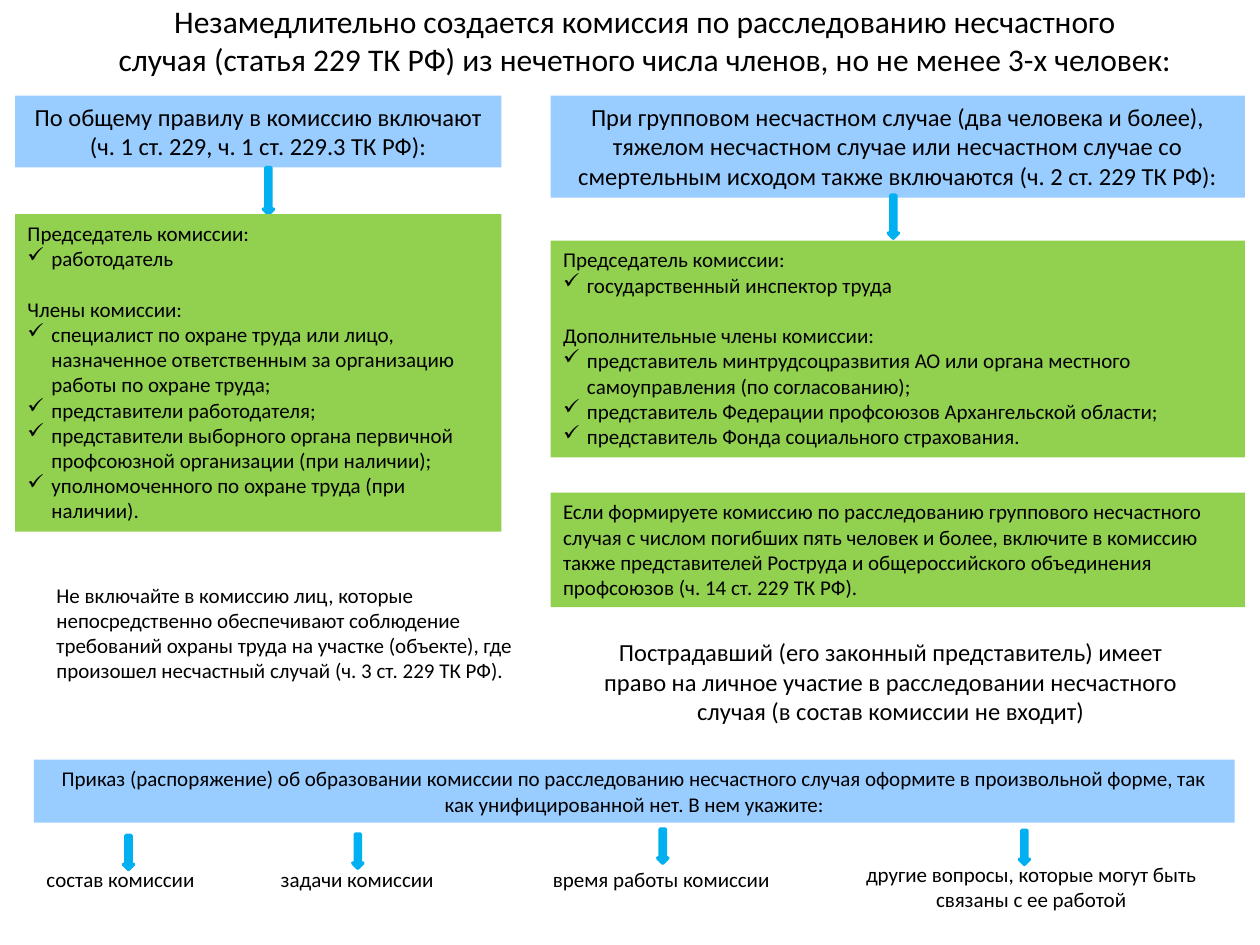
from pptx import Presentation
from pptx.dml.color import RGBColor
from pptx.enum.shapes import MSO_SHAPE
from pptx.enum.text import MSO_ANCHOR, PP_ALIGN
from pptx.oxml.ns import qn
from pptx.util import Inches, Pt
from lxml import etree

BLUE, GREEN, ARROW, BLACK = "99CCFF", "92D050", "00B0F0", "000000"


def color(text):
    return RGBColor.from_string(text)


def block(place, lines, size=12, fill=None, center=False, wrap=True):
    """Add a filled box, or a bare text box; "✓ " starts a bullet, "¶ " a spaced heading."""
    area = [Inches(n) for n in place]
    if fill:
        shape = slide.shapes.add_shape(MSO_SHAPE.RECTANGLE, *area)
        shape.shadow.inherit = False
        shape.fill.solid()
        shape.fill.fore_color.rgb = color(fill)
        shape.line.fill.background()
    else:
        shape = slide.shapes.add_textbox(*area)
    frame = shape.text_frame
    frame.word_wrap = wrap
    frame.vertical_anchor = MSO_ANCHOR.TOP
    for i, line in enumerate(lines):
        para = frame.add_paragraph() if i else frame.paragraphs[0]
        para.alignment = PP_ALIGN.CENTER if center else PP_ALIGN.LEFT
        if line.startswith("✓ "):
            props = para._p.get_or_add_pPr()
            props.set("marL", str(Inches(0.19)))
            props.set("indent", str(-Inches(0.19)))
            etree.SubElement(props, qn("a:buChar")).set("char", "✓")
        elif line.startswith("¶ "):
            para.space_before = Pt(14.6)
        for j, part in enumerate(line.removeprefix("✓ ").removeprefix("¶ ").split("\n")):
            if j:
                para.add_line_break()
            run = para.add_run()
            run.text = part
            run.font.name = "Calibri"
            run.font.size = Pt(size)
            run.font.color.rgb = color(BLACK)


deck = Presentation()
deck.slide_width, deck.slide_height = Inches(10), Inches(7.5)
slide = deck.slides.add_slide(deck.slide_layouts[6])

# Title and blue headings
block((0.59, -0.03, 9.06, 0.71), [
    "Незамедлительно создается комиссия по расследованию несчастного\n"
    "случая (статья 229 ТК РФ) из нечетного числа членов, но не менее 3-х человек:",
], 18, center=True)
left, right = (0.12, 3.86), (4.37, 5.51)
heads = [
    (left, 0.57, "По общему правилу в комиссию включают (ч. 1 ст. 229, ч. 1 ст. 229.3 ТК РФ):"),
    (right, 0.81, "При групповом несчастном случае (два человека и более), тяжелом "
                  "несчастном случае или несчастном случае со смертельным исходом "
                  "также включаются (ч. 2 ст. 229 ТК РФ):"),
]
for (x, width), height, text in heads:
    block((x, 0.76, width, height), [text], 14, BLUE, center=True)
block((0.27, 6.03, 9.53, 0.5), [
    "Приказ (распоряжение) об образовании комиссии по расследованию несчастного "
    "случая оформите в произвольной форме, так как унифицированной нет. В нем укажите:",
], fill=BLUE, center=True)

# Arrows
arrows = [(2.09, 1.33, 0.37), (7.05, 1.55, 0.34), (0.98, 6.63, 0.27),
          (2.8, 6.62, 0.27), (5.22, 6.58, 0.27), (8.09, 6.59, 0.27)]
for x, y, height in arrows:
    arrow = slide.shapes.add_shape(
        MSO_SHAPE.DOWN_ARROW, Inches(x), Inches(y), Inches(0.08), Inches(height))
    arrow.shadow.inherit = False
    arrow.fill.solid()
    arrow.fill.fore_color.rgb = color(ARROW)
    arrow.line.color.rgb = color(ARROW)
    arrow.line.width = Pt(2)

# Green boxes
greens = [
    (left, 1.7, 2.52, [
        "Председатель комиссии:",
        "✓ работодатель",
        "¶ Члены комиссии:",
        "✓ специалист по охране труда или лицо, назначенное ответственным "
        "за организацию работы по охране труда;",
        "✓ представители работодателя;",
        "✓ представители выборного органа первичной профсоюзной организации (при наличии);",
        "✓ уполномоченного по охране труда (при наличии).",
    ]),
    (right, 1.91, 1.72, [
        "Председатель комиссии:",
        "✓ государственный инспектор труда",
        "¶ Дополнительные члены комиссии:",
        "✓ представитель минтрудсоцразвития АО или органа местного "
        "самоуправления (по согласованию);",
        "✓ представитель Федерации профсоюзов Архангельской области;",
        "✓ представитель Фонда социального страхования.",
    ]),
    (right, 3.91, 0.91, [
        "Если формируете комиссию по расследованию группового несчастного случая "
        "с числом погибших пять человек и более, включите в комиссию также "
        "представителей Роструда и общероссийского объединения профсоюзов "
        "(ч. 14 ст. 229 ТК РФ).",
    ]),
]
for (x, width), y, height, lines in greens:
    block((x, y, width, height), lines, fill=GREEN)

# Notes beside the boxes
block((0.35, 4.57, 3.94, 0.91), [
    "Не включайте в комиссию лиц, которые непосредственно обеспечивают соблюдение "
    "требований охраны труда на участке (объекте), где произошел несчастный случай "
    "(ч. 3 ст. 229 ТК РФ).",
])
block((4.57, 5.01, 5, 0.81), [
    "Пострадавший (его законный представитель) имеет право на личное участие "
    "в расследовании несчастного случая (в состав комиссии не входит)",
], 14, center=True)

# Contents of the order
for x, width, text in [(0.27, 1.98, "состав комиссии"),
                       (2.13, 1.43, "задачи комиссии"),
                       (4.29, 1.94, "время работы комиссии")]:
    block((x, 6.83, width, 0.3), [text], wrap=x < 1)
block((6.73, 6.79, 2.91, 0.5),
      ["другие вопросы, которые могут быть связаны с ее работой"], center=True)

deck.save("out.pptx")
